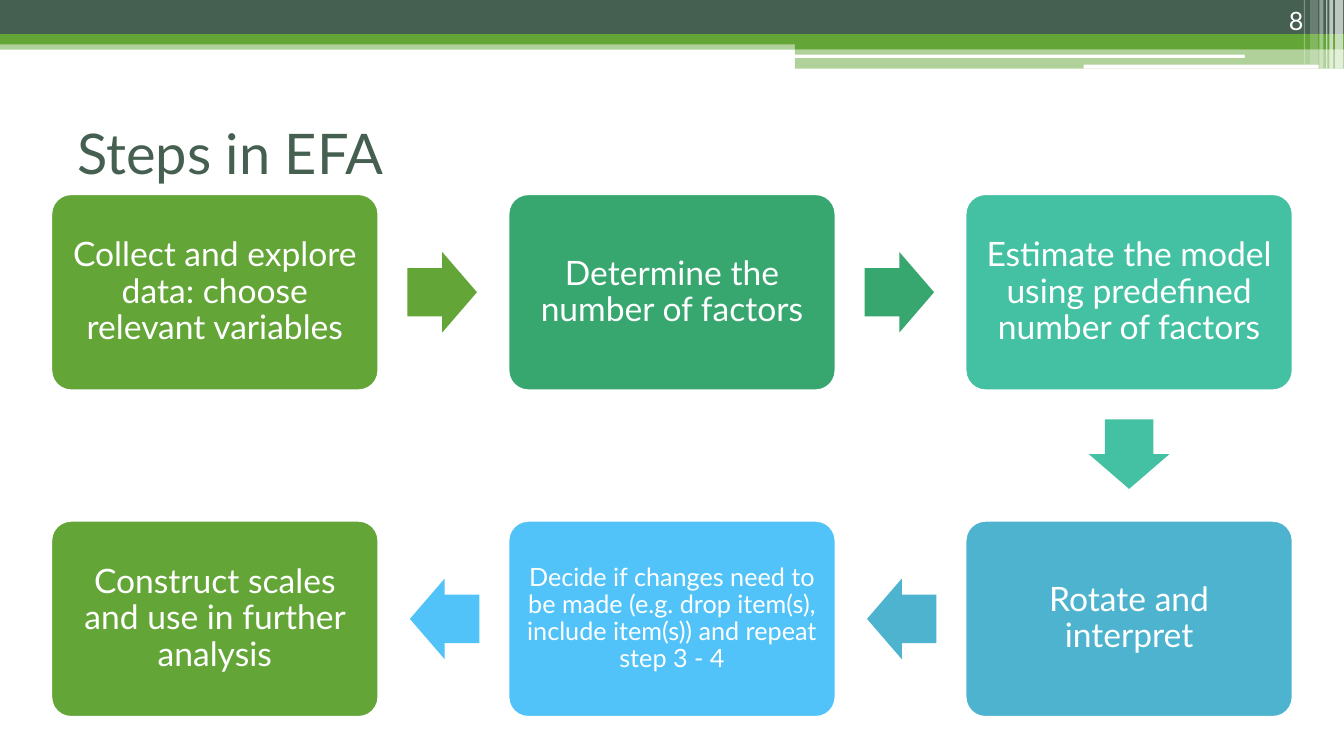
from dataclasses import dataclass

from lxml.etree import SubElement
from pptx import Presentation
from pptx.dml.color import RGBColor
from pptx.enum.shapes import MSO_SHAPE
from pptx.enum.text import MSO_ANCHOR, PP_ALIGN
from pptx.oxml.ns import qn
from pptx.util import Cm, Pt


@dataclass(frozen=True)
class Theme:
    font: str = "Lato"
    dark: str = "455F51"
    green: str = "63A537"
    jade: str = "37A76F"
    mint: str = "44C1A3"
    teal: str = "4EB3CF"
    sky: str = "51C3F9"
    white: str = "FFFFFF"
    title_size: int = 40
    step_size: int = 24
    small_size: int = 18


THEME = Theme()
SLIDE_W, SLIDE_H = 33.87, 19.05

# Step grid, in cm
COLUMNS = 3
BOX_W, BOX_H = 8.23, 4.93
GRID_LEFT, GRID_TOP = 1.3, 4.9
PITCH_X, PITCH_Y = 11.52, 8.23
ARROW_L, ARROW_W, ARROW_GAP = 1.75, 2.03, 0.74

# Text, colour, type size, inset in cm
STEPS = [
    ("Collect and explore data: choose relevant variables",
     THEME.green, THEME.step_size, 0.24),
    ("Determine the number of factors",
     THEME.jade, THEME.step_size, 0.24),
    ("Estimate the model using predefined number of factors",
     THEME.mint, THEME.step_size, 0.24),
    ("Rotate and interpret",
     THEME.teal, THEME.step_size, 0.24),
    ("Decide if changes need to be made (e.g. drop item(s), "
     "include item(s)) and repeat step 3 - 4",
     THEME.sky, THEME.small_size, 0.18),
    ("Construct scales and use in further analysis",
     THEME.green, THEME.step_size, 0.24),
]

# Left, top, width, height in cm, colour, opacity in percent
BANDS = [
    (0, 1.02, SLIDE_W, 0.23, THEME.green, 50),
    (0, 0, SLIDE_W, 0.86, THEME.dark, 100),
    (0, 0.86, SLIDE_W, 0.26, THEME.green, 100),
    (20.03, 1, 13.84, 0.24, THEME.green, 100),
    (20.03, 1.23, 13.84, 0.5, THEME.green, 50),
]
GAPS = [(20.02, 1.38, 11.35, 0.08), (27.31, 1.63, 5.92, 0.1)]
# Left, width, height in cm, opacity in percent
STRIPES = [
    (33.65, 0.2, 1.73, 65), (33.5, 0.1, 1.73, 65), (33.42, 0.03, 1.73, 60),
    (33.25, 0.1, 1.73, 40), (33.02, 0.2, 1.63, 20), (32.86, 0.03, 1.63, 30),
]


def add_block(s, kind, left, top, width, height, color, opacity=100):
    sp = s.shapes.add_shape(kind, Cm(left), Cm(top), Cm(width), Cm(height))
    sp.shadow.inherit = False
    sp.line.fill.background()
    sp.fill.solid()
    sp.fill.fore_color.rgb = RGBColor.from_string(color)
    if opacity < 100:
        clr = sp.fill._xPr.find(qn("a:solidFill"))[0]
        SubElement(clr, qn("a:alpha")).set("val", str(opacity * 1000))
    return sp


def set_text(sp, text, size, color, align, anchor):
    tf = sp.text_frame
    tf.word_wrap = True
    tf.vertical_anchor = anchor
    tf.text = text
    p = tf.paragraphs[0]
    p.alignment = align
    font = p.runs[0].font
    font.name = THEME.font
    font.size = Pt(size)
    font.color.rgb = RGBColor.from_string(color)
    return tf


def add_label(s, left, top, width, height, *style):
    sp = s.shapes.add_textbox(Cm(left), Cm(top), Cm(width), Cm(height))
    set_text(sp, *style)


def add_step(s, left, top, text, color, size, inset):
    sp = add_block(s, MSO_SHAPE.ROUNDED_RECTANGLE, left, top, BOX_W, BOX_H, color)
    sp.adjustments[0] = 0.1
    sp.line.color.rgb = RGBColor.from_string(THEME.white)
    sp.line.width = Pt(1)
    tf = set_text(sp, text, size, THEME.white, PP_ALIGN.CENTER, MSO_ANCHOR.MIDDLE)
    tf.margin_left = tf.margin_right = tf.margin_top = tf.margin_bottom = Cm(inset)
    tf.paragraphs[0].line_spacing = 0.9


def add_arrow(s, left, top, dx, dy, color):
    """Arrow leaving the box at left, top in the direction dx, dy."""
    reach = ARROW_GAP + ARROW_L / 2
    x = left + BOX_W / 2 + dx * (BOX_W / 2 + reach)
    y = top + BOX_H / 2 + dy * (BOX_H / 2 + reach)
    sp = add_block(s, MSO_SHAPE.RIGHT_ARROW, x - ARROW_L / 2, y - ARROW_W / 2,
                   ARROW_L, ARROW_W, color)
    sp.adjustments[0] = 0.6
    sp.adjustments[1] = 0.5
    sp.rotation = 90 if dy else 180 if dx < 0 else 0


def grid_cell(i):
    """Column and row of step i; every second row runs right to left."""
    row, col = divmod(i, COLUMNS)
    return (COLUMNS - 1 - col if row % 2 else col), row


def add_header(s):
    for *box, color, opacity in BANDS:
        add_block(s, MSO_SHAPE.RECTANGLE, *box, color, opacity)
    for box in GAPS:
        add_block(s, MSO_SHAPE.ROUNDED_RECTANGLE, *box, THEME.white)
    for left, width, height, opacity in STRIPES:
        add_block(s, MSO_SHAPE.RECTANGLE, left, 0, width, height, THEME.white, opacity)


def add_process(s):
    for i, (text, color, size, inset) in enumerate(STEPS):
        col, row = grid_cell(i)
        left, top = GRID_LEFT + col * PITCH_X, GRID_TOP + row * PITCH_Y
        add_step(s, left, top, text, color, size, inset)
        if i + 1 < len(STEPS):
            next_col, next_row = grid_cell(i + 1)
            add_arrow(s, left, top, next_col - col, next_row - row, color)


def main():
    prs = Presentation()
    prs.slide_width, prs.slide_height = Cm(SLIDE_W), Cm(SLIDE_H)
    s = prs.slides.add_slide(prs.slide_layouts[6])

    # Header bands, title and slide number
    add_header(s)
    add_label(s, 1.7, 2.34, 30.48, 2.97, "Steps in EFA", THEME.title_size,
              THEME.dark, PP_ALIGN.LEFT, MSO_ANCHOR.MIDDLE)
    add_label(s, 30.28, 0, 2.82, 1.02, "8", THEME.small_size,
              THEME.white, PP_ALIGN.RIGHT, MSO_ANCHOR.BOTTOM)

    # Steps and the arrows between them
    add_process(s)

    prs.save("out.pptx")


if __name__ == "__main__":
    main()
